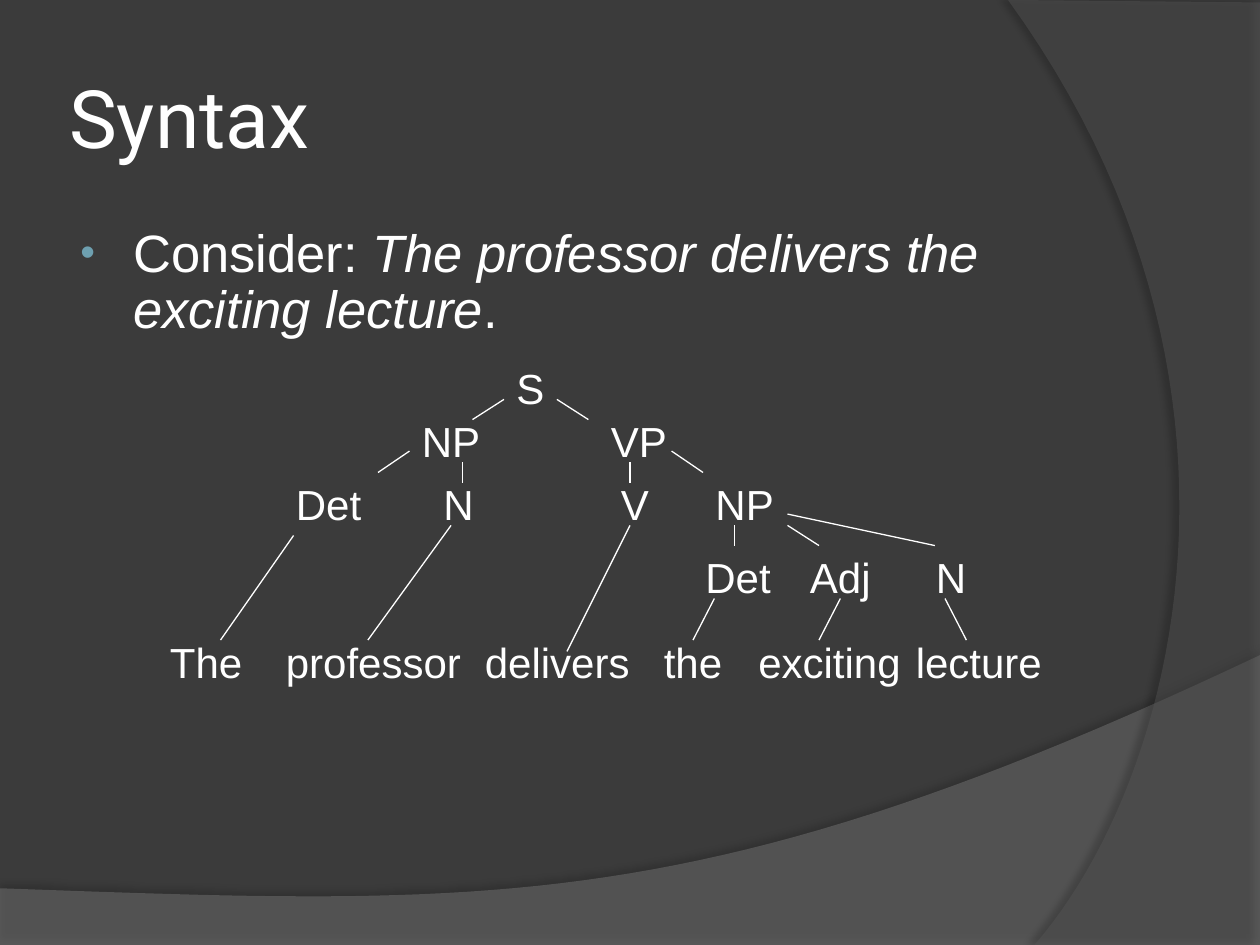
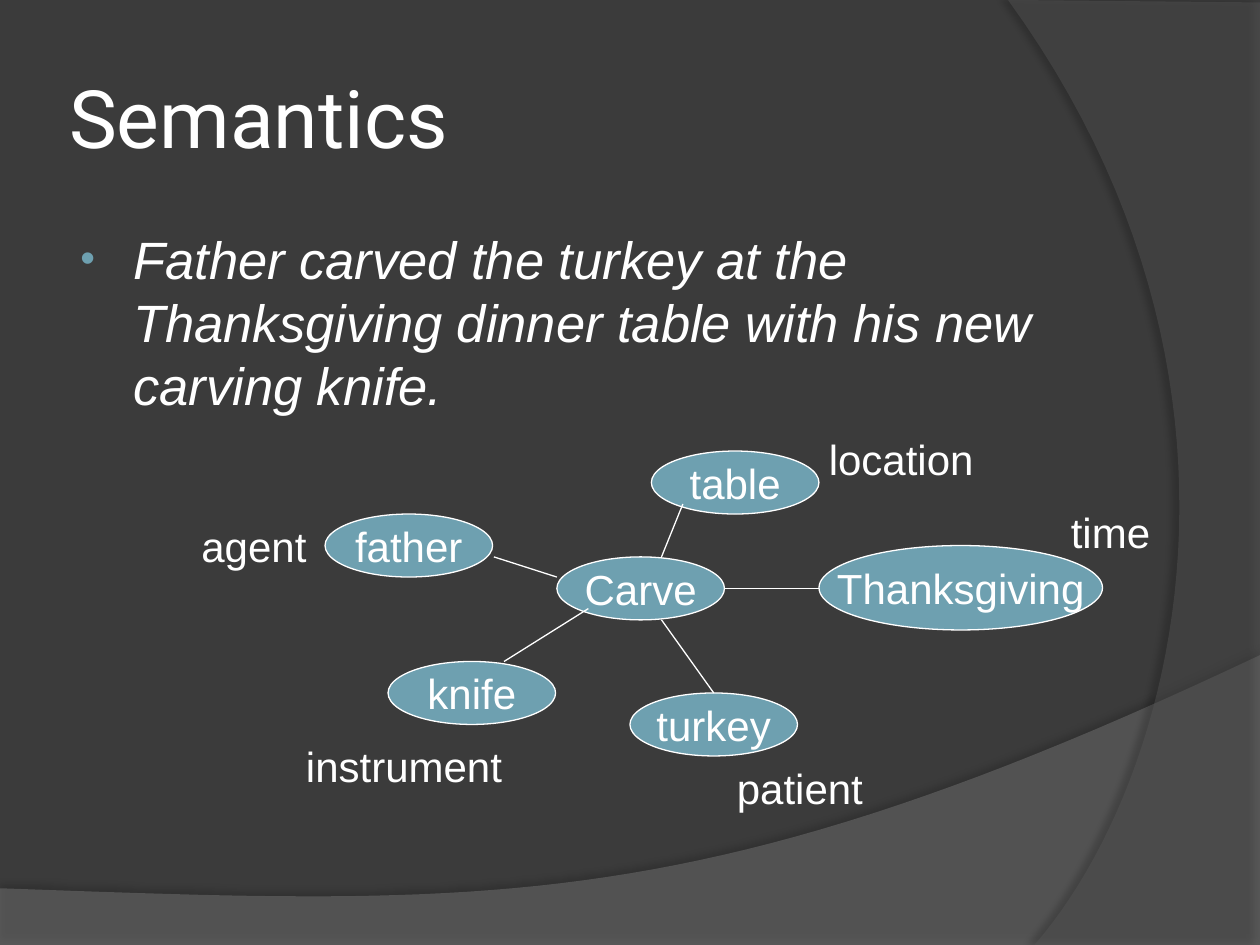
from lxml import etree
from pptx import Presentation
from pptx.dml.color import RGBColor
from pptx.enum import shapes, text
from pptx.oxml import ns
from pptx.util import Inches, Pt

COLORS = {"background": "3B3B3B", "text": "FFFFFF", "accent": "6EA0B0",
          "wave": "7C7C7C", "arc": "595959", "shadow": "000000"}
TITLE_FONT, BODY_FONT = "Roboto", "Arial"
LABEL_HEIGHT = 0.5
OVAL_SIZE = (1.33, 0.5)

TREE_ROWS = [
    (0, [("S", 2.75, 0.42)]),
    (0.42, [("NP", 2, 0.66), ("VP", 3.5, 0.65)]),
    (0.92, [("Det", 1, 0.72), ("N", 2.17, 0.44), ("V", 3.58, 0.42), ("NP", 4.33, 0.66)]),
    (1.5, [("Det", 4.25, 0.72), ("Adj", 5.08, 0.68), ("N", 6.08, 0.44)]),
    (2.17, [("The", 0, 0.78), ("professor", 0.92, 1.61), ("delivers", 2.5, 1.36),
            ("the", 3.92, 0.66), ("exciting", 4.67, 1.34), ("lecture", 5.92, 1.21)]),
]
TREE_BRANCHES = [
    (2.75, 0.34, 2.5, 0.5), (3.17, 0.34, 3.42, 0.5),
    (2, 0.75, 1.75, 0.92), (2.42, 0.84, 2.42, 1),
    (3.75, 0.84, 3.75, 1), (4.08, 0.75, 4.33, 0.92),
    (4.58, 1.34, 4.58, 1.5), (5, 1.34, 5.25, 1.5), (5, 1.25, 6.17, 1.5),
    (1.08, 1.42, 0.5, 2.25), (2.33, 1.34, 1.67, 2.25), (3.75, 1.34, 3.25, 2.34),
    (4.42, 1.92, 4.25, 2.25), (5.42, 1.92, 5.25, 2.25), (6.25, 1.92, 6.42, 2.25),
]
CONCEPTS = [
    ("Carve", 2.92, 1.03, OVAL_SIZE), ("father", 1.08, 0.69, OVAL_SIZE),
    ("knife", 1.58, 1.86, OVAL_SIZE), ("turkey", 3.5, 2.11, OVAL_SIZE),
    ("Thanksgiving", 5, 0.94, (2.25, 0.67)), ("table", 3.67, 0.19, OVAL_SIZE),
]
SPOKES = {
    "father": (2.92, 1.19, 2.42, 1.03), "table": (3.75, 1.03, 3.92, 0.61),
    "Thanksgiving": (4.25, 1.28, 5, 1.28), "knife": (3.17, 1.44, 2.5, 1.86),
    "turkey": (3.75, 1.53, 4.17, 2.11),
}
ROLES = [("agent", 0, 0.69, 1.06), ("patient", 4.25, 2.61, 1.22), ("time", 6.9, 0.58, 0.85),
         ("location", 4.98, 0, 1.37), ("instrument", 0.83, 2.44, 1.78)]


def rgb(name):
    """Return the named palette colour."""
    return RGBColor.from_string(COLORS[name])


def add_element(parent, tag, **attributes):
    """Append a drawing element with the given attributes."""
    values = {key: str(value) for key, value in attributes.items()}
    return etree.SubElement(parent, ns.qn(tag), values)


def format_run(run, size, font=BODY_FONT, italic=False):
    """Apply the shared text colour and the given font to a run."""
    run.font.name, run.font.size, run.font.italic = font, Pt(size), italic
    run.font.color.rgb = rgb("text")


def bezier(*controls, steps=48):
    """Return points along a cubic curve, without its start."""
    points = []
    for step in range(1, steps + 1):
        t = step / steps
        weights = ((1 - t) ** 3, 3 * t * (1 - t) ** 2, 3 * t * t * (1 - t), t ** 3)
        points.append(tuple(sum(weight * value for weight, value in zip(weights, axis))
                            for axis in zip(*controls)))
    return points


def add_band(slide, points, color, opacity, shadow_opacity, distance, direction):
    """Draw a translucent outline with a soft shadow."""
    corners = [(Inches(x), Inches(y)) for x, y in points]
    builder = slide.shapes.build_freeform(*corners[0], scale=1.0)
    builder.add_line_segments(corners[1:], close=True)
    band = builder.convert_to_shape()
    band.fill.solid()
    band.fill.fore_color.rgb = rgb(color)
    band.line.fill.background()
    band.shadow.inherit = False
    properties = band.element.spPr
    fill_color = properties.find(ns.qn("a:solidFill"))[0]
    add_element(fill_color, "a:alpha", val=opacity * 1000)
    effects = properties.find(ns.qn("a:effectLst"))
    shadow = add_element(effects, "a:outerShdw", blurRad=Pt(4), dist=Pt(distance),
                         dir=direction * 60000, algn="ctr", rotWithShape=0)
    shadow_color = add_element(shadow, "a:srgbClr", val=COLORS["shadow"])
    add_element(shadow_color, "a:alpha", val=shadow_opacity * 1000)


def add_backdrop(slide):
    """Draw the wave at the bottom and the arc at the right."""
    wave = bezier((10, 5.2), (5.59, 7.29), (3.91, 7.19), (0, 7.05))
    add_band(slide, [(0, 7.5), (10, 7.5), (10, 5.2)] + wave, "wave", 45, 35, 3.5, 270)
    arc = bezier((8.21, 7.5), (9.35, 6.19), (10.18, 3), (8, 0))
    add_band(slide, [(10, 0.02), (10, 7.5), (8.21, 7.5)] + arc, "arc", 40, 45, 4, 180)


def add_title(slide, title, left, top, width, height):
    """Add the slide title, centred vertically in its box."""
    box = slide.shapes.add_textbox(Inches(left), Inches(top), Inches(width), Inches(height))
    frame = box.text_frame
    frame.word_wrap = True
    frame.vertical_anchor = text.MSO_ANCHOR.MIDDLE
    frame.margin_left = frame.margin_right = Inches(0.05)
    frame.text = title
    format_run(frame.paragraphs[0].runs[0], 46, TITLE_FONT)


def add_bullet(slide, pieces, line_spacing, left, top, width, height):
    """Add one bulleted paragraph made of (text, italic) pieces."""
    box = slide.shapes.add_textbox(Inches(left), Inches(top), Inches(width), Inches(height))
    box.text_frame.word_wrap = True
    paragraph = box.text_frame.paragraphs[0]
    paragraph.line_spacing = line_spacing
    for words, italic in pieces:
        run = paragraph.add_run()
        run.text = words
        format_run(run, 30, italic=italic)
    properties = paragraph._p.get_or_add_pPr()
    properties.set("marL", str(Inches(0.46)))
    properties.set("indent", str(Inches(-0.42)))
    bullet_color = add_element(properties, "a:buClr")
    add_element(bullet_color, "a:srgbClr", val=COLORS["accent"])
    add_element(properties, "a:buSzPct", val=80000)
    add_element(properties, "a:buFont", typeface=BODY_FONT)
    add_element(properties, "a:buChar", char="•")


def add_label(slide, word, left, top, width):
    """Add a one-line label."""
    box = slide.shapes.add_textbox(Inches(left), Inches(top), Inches(width),
                                   Inches(LABEL_HEIGHT))
    frame = box.text_frame
    frame.word_wrap = False
    frame.auto_size = text.MSO_AUTO_SIZE.SHAPE_TO_FIT_TEXT
    frame.text = word
    format_run(frame.paragraphs[0].runs[0], 24)


def add_line(slide, left, top, ends):
    """Draw a thin line whose ends are relative to left and top."""
    x1, y1, x2, y2 = ends
    line = slide.shapes.add_connector(
        shapes.MSO_CONNECTOR.STRAIGHT, Inches(left + x1), Inches(top + y1),
        Inches(left + x2), Inches(top + y2))
    line.line.color.rgb = rgb("text")
    line.line.width = Pt(0.75)
    add_element(line.element.spPr, "a:effectLst")
    return line


def add_oval(slide, word, left, top, size):
    """Add a concept oval with centred text."""
    width, height = size
    oval = slide.shapes.add_shape(shapes.MSO_SHAPE.OVAL, Inches(left), Inches(top),
                                  Inches(width), Inches(height))
    oval.shadow.inherit = False
    oval.fill.solid()
    oval.fill.fore_color.rgb = rgb("accent")
    oval.line.color.rgb = rgb("text")
    oval.line.width = Pt(0.75)
    frame = oval.text_frame
    frame.word_wrap = False
    frame.vertical_anchor = text.MSO_ANCHOR.MIDDLE
    frame.text = word
    frame.paragraphs[0].alignment = text.PP_ALIGN.CENTER
    format_run(frame.paragraphs[0].runs[0], 24)
    return oval


def add_syntax_tree(slide, left, top):
    """Draw the parse tree of the sentence."""
    for row_top, words in TREE_ROWS:
        for word, word_left, width in words:
            add_label(slide, word, left + word_left, top + row_top, width)
    for ends in TREE_BRANCHES:
        add_line(slide, left, top, ends)


def add_concept_map(slide, left, top):
    """Draw the verb, its arguments and their roles."""
    ovals = {word: add_oval(slide, word, left + x, top + y, size)
             for word, x, y, size in CONCEPTS}
    spokes = {word: add_line(slide, left, top, ends) for word, ends in SPOKES.items()}
    spokes["turkey"].end_connect(ovals["turkey"], 0)
    for role, x, y, width in ROLES:
        add_label(slide, role, left + x, top + y, width)


def add_content_slide(presentation, title, pieces, line_spacing):
    """Add a slide with backdrop, title and one bullet."""
    slide = presentation.slides.add_slide(presentation.slide_layouts[6])
    add_backdrop(slide)
    add_title(slide, title, 0.5, 0.3, 8.17, 1.25)
    add_bullet(slide, pieces, line_spacing, 0.5, 1.75, 8.17, 4.95)
    return slide


def main():
    """Build and save the presentation."""
    presentation = Presentation()
    presentation.slide_width, presentation.slide_height = Inches(10), Inches(7.5)
    background = presentation.slide_master.background.fill
    background.solid()
    background.fore_color.rgb = rgb("background")

    syntax = add_content_slide(presentation, "Syntax", [
        ("Consider: ", False),
        ("The professor delivers the exciting lecture", True),
        (".", False)], 0.9)
    add_syntax_tree(syntax, 1.25, 2.83)

    semantics = add_content_slide(presentation, "Semantics", [
        ("Father carved the turkey at the Thanksgiving dinner table "
         "with his new carving knife.", True)], 1.0)
    add_concept_map(semantics, 1.5, 3.39)
    presentation.save("out.pptx")


if __name__ == "__main__":
    main()
